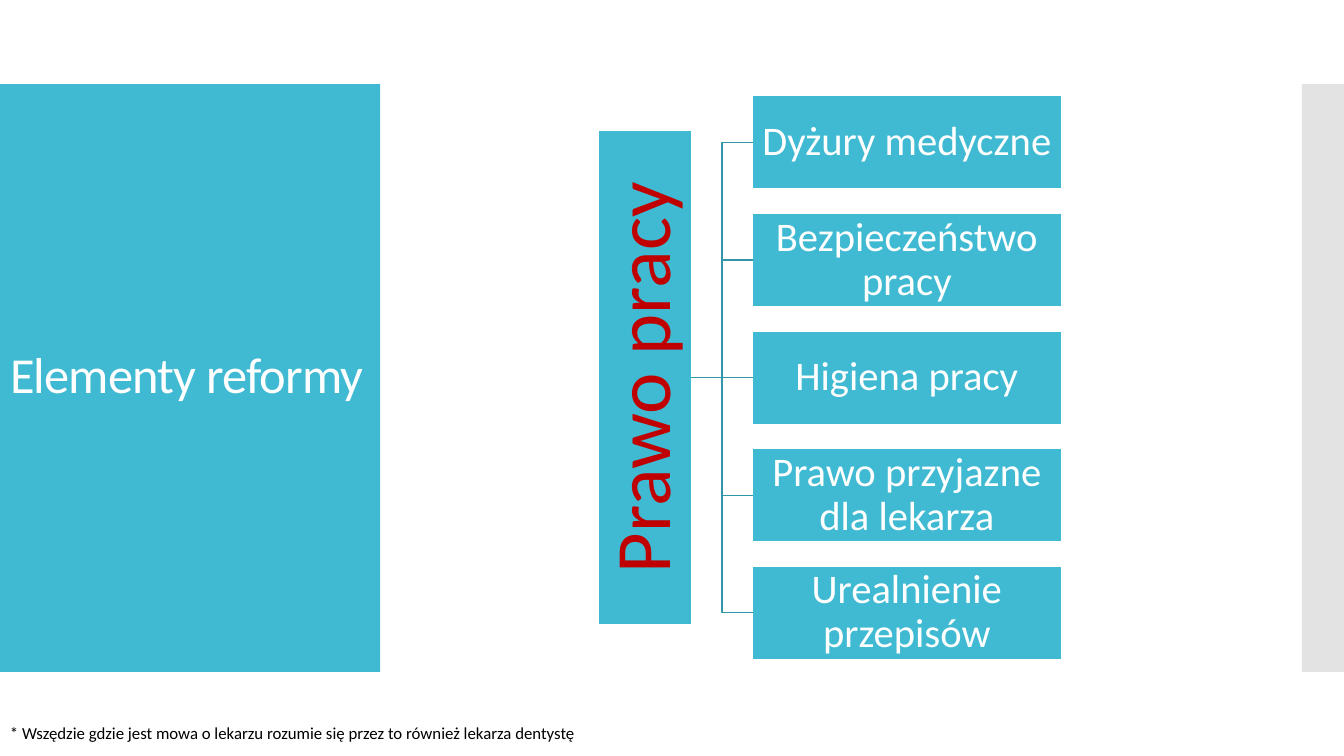
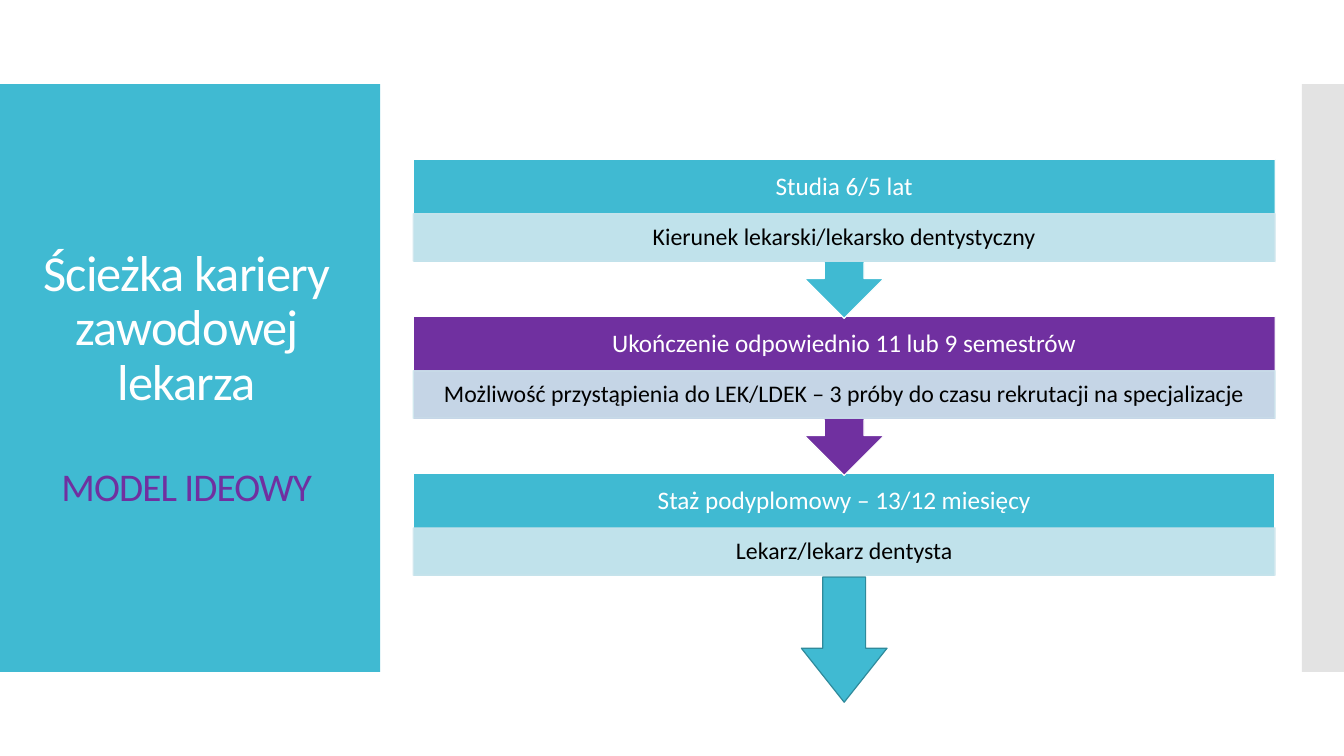
"""Two slides on the reform of doctors' work and their career path."""
from lxml.etree import SubElement
from pptx import Presentation
from pptx.dml.color import RGBColor
from pptx.enum.shapes import MSO_CONNECTOR, MSO_SHAPE
from pptx.enum.text import MSO_ANCHOR, MSO_AUTO_SIZE, PP_ALIGN
from pptx.oxml.ns import qn
from pptx.util import Emu, Pt

COLS, ROWS, CELL = 160, 90, 76200
FONT = "Calibri"
COLORS = {
    "teal": "40BAD2", "line": "3395A8", "edge": "2F8A9B", "pale": "CFE7EE",
    "grey": "C8C8C8", "white": "FFFFFF", "black": "000000",
    "red": "C00000", "purple": "7030A0",
}


def rgb(name):
    return RGBColor.from_string(COLORS[name])


def grid(*cells):
    return [Emu(round(c * CELL)) for c in cells]


class Deck:
    def __init__(self):
        self.prs = Presentation()
        self.prs.slide_width, self.prs.slide_height = grid(COLS, ROWS)
        self.layout = self.prs.slide_layouts.get_by_name("Title Only")
        self.s = None

    def slide(self, at, lines, align=PP_ALIGN.CENTER):
        self.s = self.prs.slides.add_slide(self.layout)
        if len(self.prs.slides) == 1:
            self.bands()
        sp = self.s.shapes.title
        sp.left, sp.top, sp.width, sp.height = grid(*at)
        self.frame(sp, (1.2, 0.6, 1.2, 0.6))
        for i, (text, size, color, before) in enumerate(lines):
            p = sp.text_frame.paragraphs[0] if i == 0 else sp.text_frame.add_paragraph()
            p.space_before = Pt(before)
            r = self.run(p, text, size, color, align)
            r.font._element.set("spc", "-60")

    def bands(self):
        left = self.shape((0, 10, 45.25, 70), "teal")
        right = self.shape((COLS - 5, 10, 5, 70), "grey", alpha=50)
        for i, sp in enumerate((left, right)):
            self.layout.shapes._spTree.insert(2 + i, sp._element)

    def frame(self, sp, insets, anchor=MSO_ANCHOR.MIDDLE):
        tf = sp.text_frame
        tf.word_wrap = True
        tf.auto_size = MSO_AUTO_SIZE.NONE
        tf.vertical_anchor = anchor
        tf.margin_left, tf.margin_top, tf.margin_right, tf.margin_bottom = grid(*insets)
        return tf

    def run(self, p, text, size, color, align=PP_ALIGN.CENTER, spacing=0.9):
        p.alignment = align
        p.line_spacing = spacing
        r = p.add_run()
        r.text = text
        r.font.name = FONT
        r.font.size = Pt(size)
        r.font.color.rgb = rgb(color)
        return r

    def shape(self, at, fill, line=None, kind=MSO_SHAPE.RECTANGLE, alpha=None):
        sp = self.s.shapes.add_shape(kind, *grid(*at))
        sp.shadow.inherit = False
        sp.fill.solid()
        sp.fill.fore_color.rgb = rgb(fill)
        if line:
            sp.line.color.rgb = rgb(line)
            sp.line.width = Pt(0.85)
        else:
            sp.line.fill.background()
        if alpha:
            for clr in sp._element.spPr.iter(qn("a:srgbClr")):
                SubElement(clr, qn("a:alpha")).set("val", str(alpha * 1000))
        return sp

    def box(self, at, text, size, color, fill, line="white", insets=(0.25,) * 4, **look):
        sp = self.shape(at, fill, line, **look)
        tf = self.frame(sp, insets)
        self.run(tf.paragraphs[0], text, size, color)
        return sp

    def join(self, a, b):
        level = abs(a.top + a.height / 2 - b.top - b.height / 2) < CELL / 10
        kind = MSO_CONNECTOR.STRAIGHT if level else MSO_CONNECTOR.ELBOW
        cx = self.s.shapes.add_connector(kind, 0, 0, 0, 0)
        cx.begin_connect(a, 3)
        cx.end_connect(b, 1)
        cx.line.color.rgb = rgb("line")
        cx.line.width = Pt(0.85)
        SubElement(cx._element.spPr, qn("a:effectLst"))

    def note(self, at, text):
        sp = self.s.shapes.add_textbox(*grid(*at))
        tf = self.frame(sp, (1.2, 0.6, 1.2, 0.6), MSO_ANCHOR.TOP)
        self.run(tf.paragraphs[0], text, 12, "black", PP_ALIGN.LEFT, 1.0)


def reform(deck):
    deck.slide((0, 14.75, 46.4, 60.4), [("Elementy reformy", 36, "white", 0)], PP_ALIGN.LEFT)
    root = deck.box((71.2, 15.5, 11.1, 58.9), "Prawo pracy", 56, "red", "teal", insets=(0.5,) * 4)
    root.text_frame._txBody.bodyPr.set("vert", "vert270")
    topics = ["Dyżury medyczne", "Bezpieczeństwo pracy", "Higiena pracy",
              "Prawo przyjazne dla lekarza", "Urealnienie przepisów"]
    for i, topic in enumerate(topics):
        sp = deck.box((89.6, 11.4 + 14 * i, 36.75, 11.1), topic, 29, "white", "teal")
        deck.join(root, sp)
    deck.note((0, 85.5, 74.8, 3.6),
              "* Wszędzie gdzie jest mowa o lekarzu rozumie się przez to również lekarza dentystę")


def career(deck):
    deck.slide((2.9, 14.9, 38.65, 60.4),
               [("Ścieżka kariery zawodowej lekarza", 36, "white", 0),
                ("MODEL IDEOWY", 28, "purple", 40)])
    left, top, width, step = 49.2, 18.95, 102.6, 18.7
    head, detail, body = 6.5, 5.65, 12.35
    stages = [
        ("Studia 6/5 lat", "Kierunek lekarski/lekarsko dentystyczny", "teal"),
        ("Ukończenie odpowiednio 11 lub 9 semestrów",
         "Możliwość przystąpienia do LEK/LDEK – 3 próby do czasu rekrutacji na specjalizacje",
         "purple"),
        ("Staż podyplomowy – 13/12 miesięcy", "Lekarz/lekarz dentysta", "teal"),
    ]
    last = len(stages) - 1
    for i, (title, text, fill) in reversed(list(enumerate(stages))):
        y = top + step * i
        kind = MSO_SHAPE.RECTANGLE if i == last else MSO_SHAPE.DOWN_ARROW_CALLOUT
        height = body if i == last else 18.95
        deck.box((left, y, width, height), title, 18, "white", fill,
                 insets=(1.7, 0, 1.7, detail), kind=kind)
        deck.box((left, y + head, width, detail), text, 17, "black", "pale", "pale",
                 insets=(1.55, 0.25, 1.55, 0.25), alpha=90)
    arrow_w = 10.2
    sp = deck.shape((left + (width - arrow_w) / 2, top + step * last + body, arrow_w, 14.9),
                    "teal", "edge", MSO_SHAPE.DOWN_ARROW)
    sp.adjustments[1] = 0.63


def main():
    deck = Deck()
    reform(deck)
    career(deck)
    deck.prs.save("out.pptx")


if __name__ == "__main__":
    main()
